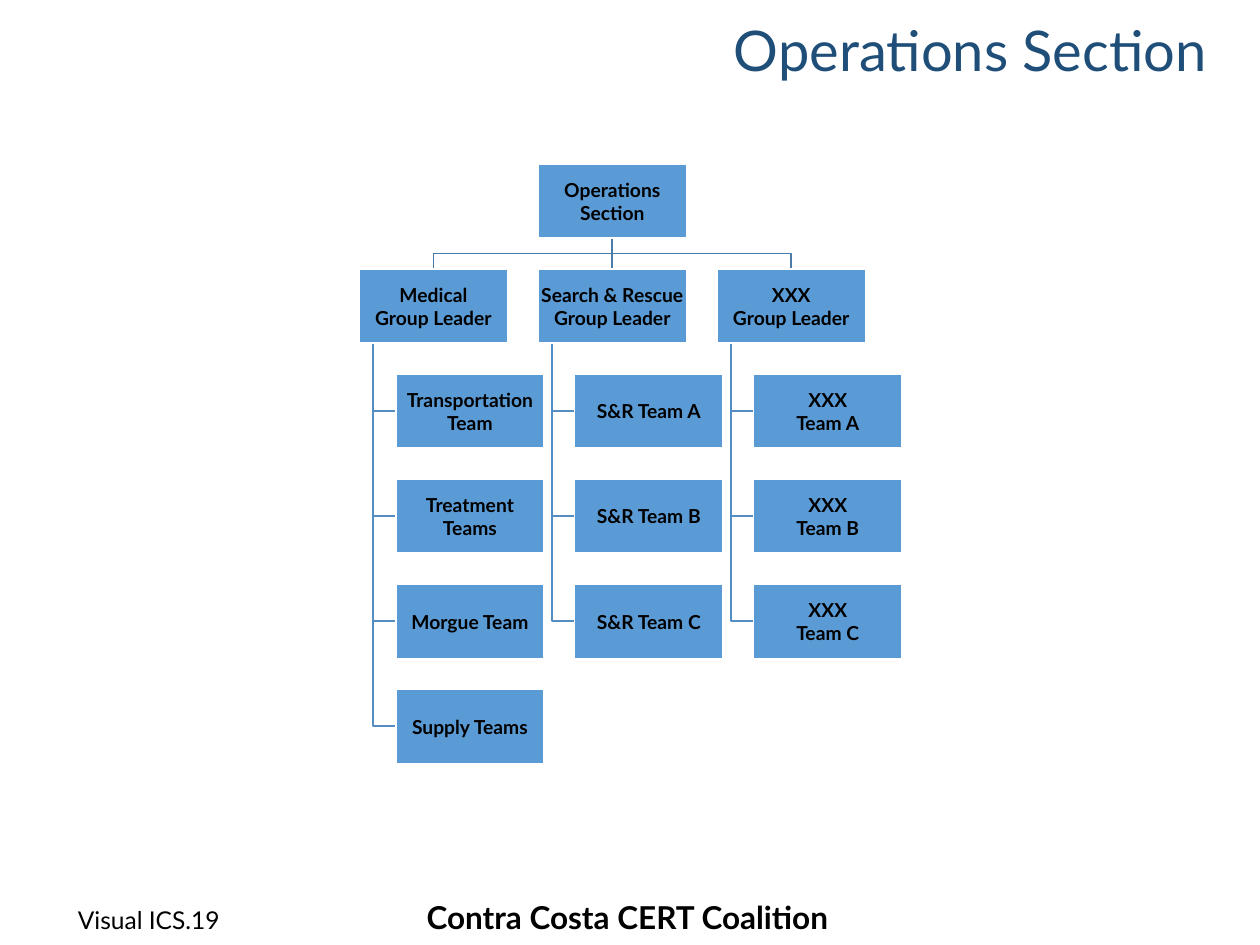
from pptx import Presentation
from pptx.dml.color import RGBColor as RGB
from pptx.enum.shapes import MSO_CONNECTOR as Link, MSO_SHAPE as Kind
from pptx.enum.text import MSO_ANCHOR as Anchor, MSO_AUTO_SIZE as Auto, PP_ALIGN as Align
from pptx.oxml.ns import qn
from pptx.util import Inches, Pt
from lxml.etree import SubElement

BLACK = RGB(0x00, 0x00, 0x00)
WHITE = RGB(0xFF, 0xFF, 0xFF)
NAVY = RGB(0x1F, 0x4E, 0x79)
BLUE = RGB(0x5B, 0x9B, 0xD5)
TRUNK = RGB(0x49, 0x7C, 0xAB)
BRANCH = RGB(0x53, 0x8D, 0xC1)

WIDE, HIGH = 1.18, 0.59
MID, TOP = 4.27, 1.3
STEP = 1.42
ROW = (5.47 - TOP) / 5
groups = [
    ("Medical\nGroup Leader",
     ["Transportation\nTeam", "Treatment\nTeams", "Morgue Team", "Supply Teams"]),
    ("Search & Rescue\nGroup Leader",
     ["S&R Team A", "S&R Team B", "S&R Team C"]),
    ("XXX\nGroup Leader",
     ["XXX\nTeam A", "XXX\nTeam B", "XXX\nTeam C"]),
]

deck = Presentation()
deck.slide_width, deck.slide_height = Inches(10), Inches(7.5)
slide = deck.slides.add_slide(deck.slide_layouts[5])
shapes = slide.shapes


def style(frame, size, color, align, bold=False):
    for para in frame.paragraphs:
        para.alignment = align
        font = para.font
        font.name, font.size, font.bold = "Lato", Pt(size), bold
        font.color.rgb = color


def wire(points, color):
    start, *rest = [(Inches(x), Inches(y)) for x, y in points]
    pen = shapes.build_freeform(*start, scale=1.0)
    pen.add_line_segments(rest, close=False)
    line = pen.convert_to_shape()
    line.shadow.inherit = False
    line.fill.background()
    line.line.color.rgb = color
    line.line.width = Pt(1)


for text, left, top, width, height, size, align, bold in [
    ("Contra Costa CERT Coalition", 3.16, 7.13, 3.64, 0.3, 18, Align.CENTER, True),
    ("Visual ICS.19", 0.52, 7.13, 1.64, 0.34, 14, Align.LEFT, False),
]:
    label = shapes.add_textbox(Inches(left), Inches(top), Inches(width), Inches(height))
    frame = label.text_frame
    frame.text = text
    frame.word_wrap = not bold
    frame.auto_size = Auto.SHAPE_TO_FIT_TEXT
    if bold:
        frame.margin_top = frame.margin_bottom = 0
    style(frame, size, BLACK, align, bold)

title = shapes.title
title.left, title.top = Inches(1.09), Inches(0.13)
title.width, title.height = Inches(8.59), Inches(0.59)
frame = title.text_frame
frame.text = "Operations Section"
frame.vertical_anchor = Anchor.MIDDLE
frame.auto_size = Auto.NONE
frame.paragraphs[0].line_spacing = 0.9
style(frame, 32, NAVY, Align.RIGHT)

hub = MID + WIDE / 2
base = TOP + HIGH
lead = TOP + ROW
boxes = [("Operations\nSection", MID, TOP)]
for col, (chief, teams) in enumerate(groups):
    left = MID + (col - 1) * STEP
    mid = left + WIDE / 2
    stem = left + 0.11
    boxes.append((chief, left, lead))
    if col == 1:
        drop = shapes.add_connector(
            Link.STRAIGHT, Inches(hub), Inches(base), Inches(hub), Inches(lead))
        drop.line.color.rgb = TRUNK
        drop.line.width = Pt(1)
        SubElement(drop.element.spPr, qn("a:effectLst"))
    else:
        bend = (base + lead) / 2
        wire([(hub, base), (hub, bend), (mid, bend), (mid, lead)], TRUNK)
    for row, team in enumerate(teams, 2):
        top = TOP + row * ROW
        side = top + HIGH / 2
        boxes.append((team, left + 0.29, top))
        wire([(stem, lead + HIGH), (stem, side), (left + 0.29, side)], BRANCH)

for text, left, top in boxes:
    box = shapes.add_shape(
        Kind.RECTANGLE, Inches(left), Inches(top), Inches(WIDE), Inches(HIGH))
    box.shadow.inherit = False
    box.fill.solid()
    box.fill.fore_color.rgb = BLUE
    box.line.color.rgb = WHITE
    box.line.width = Pt(1)
    frame = box.text_frame
    frame.text = text
    frame.word_wrap = True
    frame.vertical_anchor = Anchor.MIDDLE
    frame.margin_left = frame.margin_right = Inches(0.01)
    frame.margin_top = frame.margin_bottom = Inches(0.01)
    style(frame, 11, BLACK, Align.CENTER, True)

deck.save("out.pptx")
